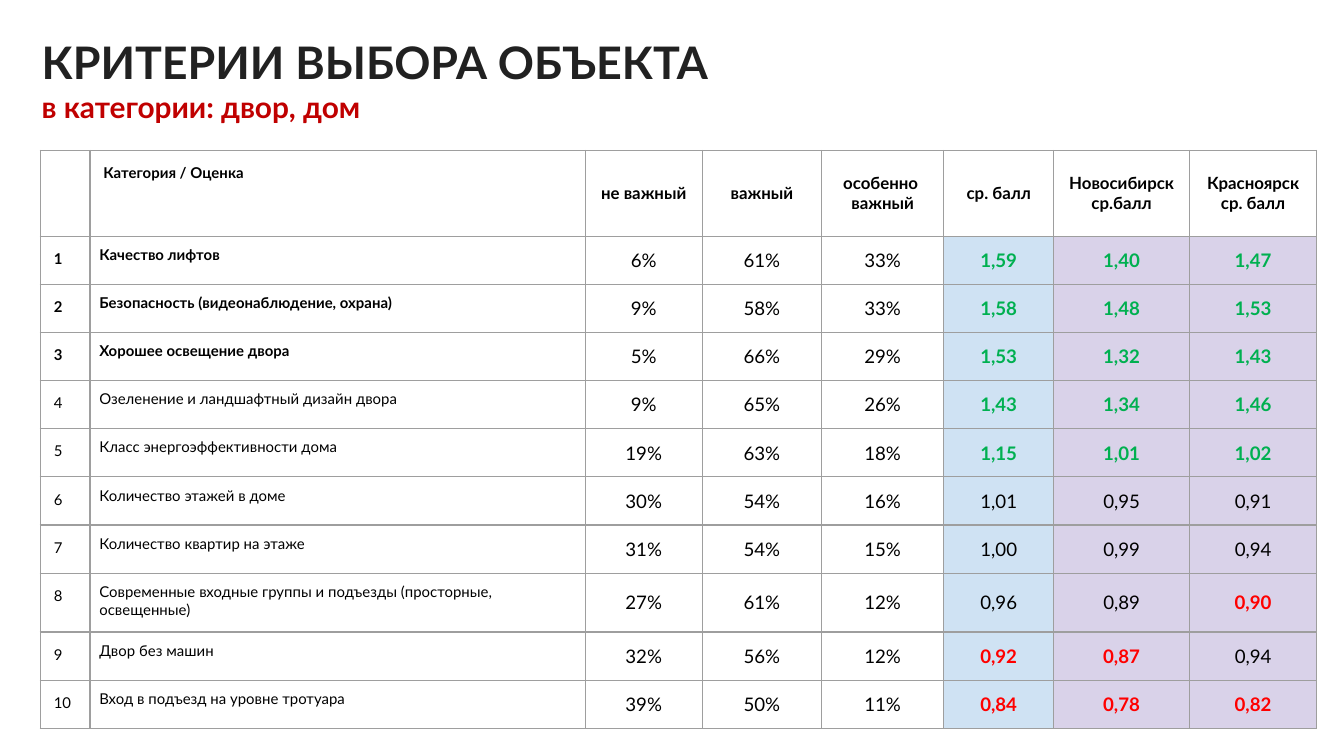
from lxml import etree
from pptx import Presentation
from pptx.dml.color import RGBColor
from pptx.enum.text import MSO_ANCHOR, MSO_AUTO_SIZE, PP_ALIGN
from pptx.oxml.ns import qn
from pptx.util import Inches, Pt

LEFT, CENTER = PP_ALIGN.LEFT, PP_ALIGN.CENTER
TOP, MIDDLE = MSO_ANCHOR.TOP, MSO_ANCHOR.MIDDLE
NO_AUTOFIT = MSO_AUTO_SIZE.NONE

FONT = "Lato"
COLORS = {
    "title": "212121", "subtitle": "C00000", "text": "000000",
    "high": "00B050", "low": "FF0000", "border": "9E9E9E",
    "average": "CFE2F3", "city": "D9D2E9",
}

TITLE = "КРИТЕРИИ ВЫБОРА ОБЪЕКТА"
SUBTITLE = "в категории: двор, дом"

# Each header is a list of paragraphs
HEADERS = [
    [], ["Категория / Оценка"], ["не важный"], ["важный"],
    ["особенно ", "важный"], ["ср. балл"], ["Новосибирск ср.балл"],
    ["Красноярск", "ср. балл"],
]
CRITERIA = [
    ("Качество лифтов", "6%", "61%", "33%", "1,59", "1,40", "1,47"),
    ("Безопасность (видеонаблюдение, охрана)", "9%", "58%", "33%", "1,58", "1,48", "1,53"),
    ("Хорошее освещение двора", "5%", "66%", "29%", "1,53", "1,32", "1,43"),
    ("Озеленение и ландшафтный дизайн двора", "9%", "65%", "26%", "1,43", "1,34", "1,46"),
    ("Класс энергоэффективности дома", "19%", "63%", "18%", "1,15", "1,01", "1,02"),
    ("Количество этажей в доме", "30%", "54%", "16%", "1,01", "0,95", "0,91"),
    ("Количество квартир на этаже", "31%", "54%", "15%", "1,00", "0,99", "0,94"),
    ("Современные входные группы и подъезды (просторные, освещенные)",
     "27%", "61%", "12%", "0,96", "0,89", "0,90"),
    ("Двор без машин", "32%", "56%", "12%", "0,92", "0,87", "0,94"),
    ("Вход в подъезд на уровне тротуара", "39%", "50%", "11%", "0,84", "0,78", "0,82"),
]
LEADERS = 3            # criteria set in bold
HIGH_COUNT, LOW_COUNT = 5, 2   # scores highlighted in each score column
SCORE_FILLS = {5: "average", 6: "city", 7: "city"}

TABLE_WIDTH, TABLE_HEIGHT = 9.5, 4.3
# Proportions, scaled to the table size
COLUMN_WIDTHS = [0.37, 3.69, 0.87, 0.89, 0.91, 0.82, 1.01, 0.95]
HEADER_HEIGHT, ROW_HEIGHT, TALL_ROW_HEIGHT = 0.64, 0.36, 0.44
TALL_ROW = 8


def add_text(paragraph, text, size, color="text", bold=False, align=LEFT):
    paragraph.alignment = align
    run = paragraph.add_run()
    run.text = text
    run.font.name = FONT
    run.font.size = Pt(size)
    run.font.bold = bold
    run.font.color.rgb = RGBColor.from_string(COLORS[color])


def set_margins(target, inches):
    target.margin_left = target.margin_right = Inches(inches)
    target.margin_top = target.margin_bottom = Inches(inches)


def add_borders(cell):
    properties = cell._tc.get_or_add_tcPr()
    for side in ("a:lnL", "a:lnR", "a:lnT", "a:lnB"):
        line = etree.SubElement(properties, qn(side), w=str(Pt(0.75)))
        fill = etree.SubElement(line, qn("a:solidFill"))
        etree.SubElement(fill, qn("a:srgbClr"), val=COLORS["border"])


def fill_cell(cell, lines, size, margin, fill=None, anchor=TOP, **style):
    set_margins(cell, margin)
    cell.vertical_anchor = anchor
    add_borders(cell)
    if fill:
        cell.fill.solid()
        cell.fill.fore_color.rgb = RGBColor.from_string(COLORS[fill])
    else:
        cell.fill.background()
    frame = cell.text_frame
    for index, line in enumerate(lines):
        paragraph = frame.add_paragraph() if index else frame.paragraphs[0]
        add_text(paragraph, line, size, **style)


def score_color(score, column):
    """Mark the highest and the lowest scores of a column."""
    ranked = sorted((row[column - 1] for row in CRITERIA), reverse=True)
    if score in ranked[:HIGH_COUNT]:
        return "high"
    return "low" if score in ranked[-LOW_COUNT:] else "text"


def scale(sizes, total):
    """Stretch the sizes so that they add up to the total, in inches."""
    return [Inches(size * total / sum(sizes)) for size in sizes]


def add_title(slide):
    title = slide.shapes.title
    title.left, title.top = Inches(0.21), Inches(0.16)
    title.width, title.height = Inches(9.11), Inches(0.72)
    frame = title.text_frame
    frame.word_wrap = True
    frame.auto_size = NO_AUTOFIT
    frame.vertical_anchor = TOP
    set_margins(frame, 0.1)
    add_text(frame.paragraphs[0], TITLE, 24, "title", bold=True)
    add_text(frame.add_paragraph(), SUBTITLE, 16, "subtitle", bold=True)


def add_criteria_table(slide):
    heights = [HEADER_HEIGHT] + [ROW_HEIGHT] * len(CRITERIA)
    heights[TALL_ROW] = TALL_ROW_HEIGHT
    table = slide.shapes.add_table(
        len(heights), len(COLUMN_WIDTHS), Inches(0.3), Inches(1.12),
        Inches(TABLE_WIDTH), Inches(TABLE_HEIGHT)).table
    table.first_row = table.horz_banding = False
    for column, width in zip(table.columns, scale(COLUMN_WIDTHS, TABLE_WIDTH)):
        column.width = width
    for row, height in zip(table.rows, scale(heights, TABLE_HEIGHT)):
        row.height = height

    for column, lines in enumerate(HEADERS):
        centered = column > 1
        fill_cell(table.cell(0, column), lines, 9 if centered else 8, 0.1, bold=True,
                  anchor=MIDDLE if centered else TOP, align=CENTER if centered else LEFT)

    for number, (name, *values) in enumerate(CRITERIA, start=1):
        leader = number <= LEADERS
        fill_cell(table.cell(number, 0), [str(number)], 8, 0.1, bold=leader)
        fill_cell(table.cell(number, 1), [name], 8, 0.07, bold=leader)
        for column, value in enumerate(values, start=2):
            fill = SCORE_FILLS.get(column)
            color = score_color(value, column) if fill else "text"
            fill_cell(table.cell(number, column), [value], 10, 0.07, fill, MIDDLE,
                      color=color, bold=color != "text", align=CENTER)


def main():
    presentation = Presentation()
    presentation.slide_width = Inches(10)
    presentation.slide_height = presentation.slide_width * 9 // 16
    slide = presentation.slides.add_slide(presentation.slide_layouts[5])
    add_title(slide)
    add_criteria_table(slide)
    presentation.save("out.pptx")


if __name__ == "__main__":
    main()
